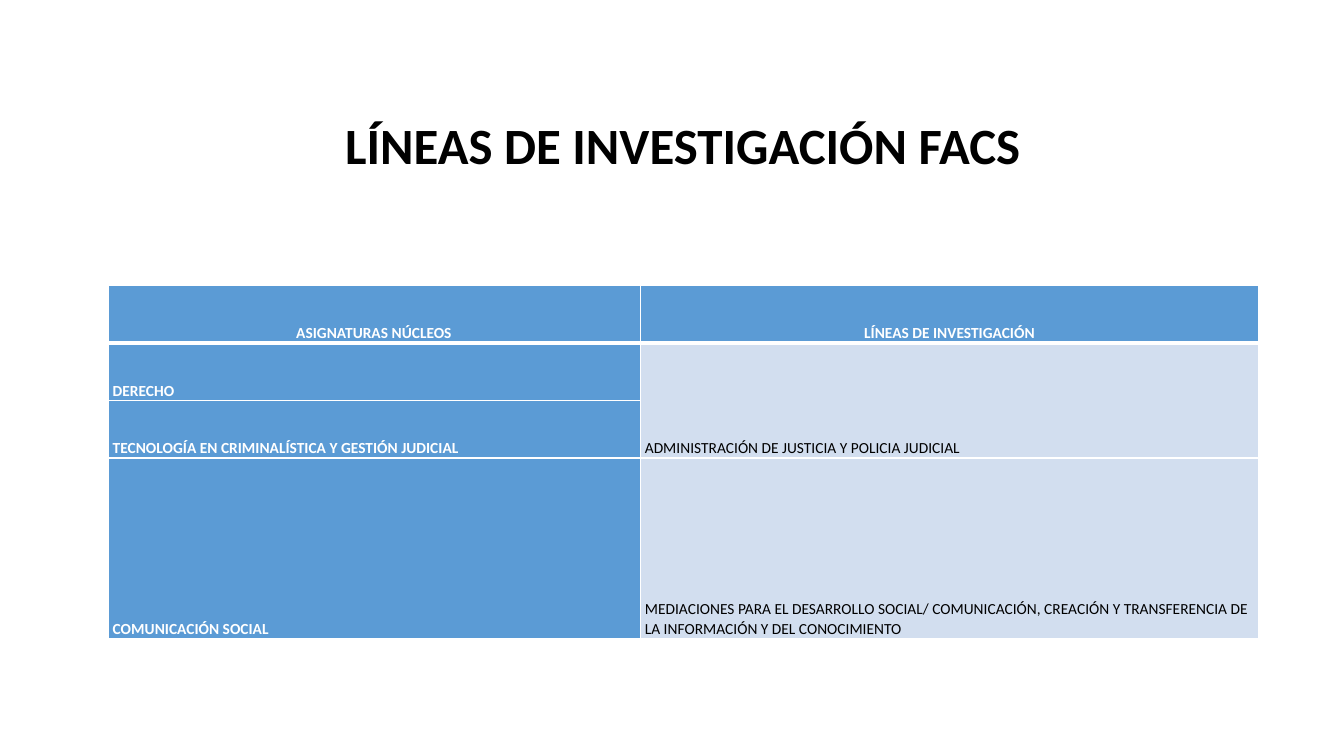
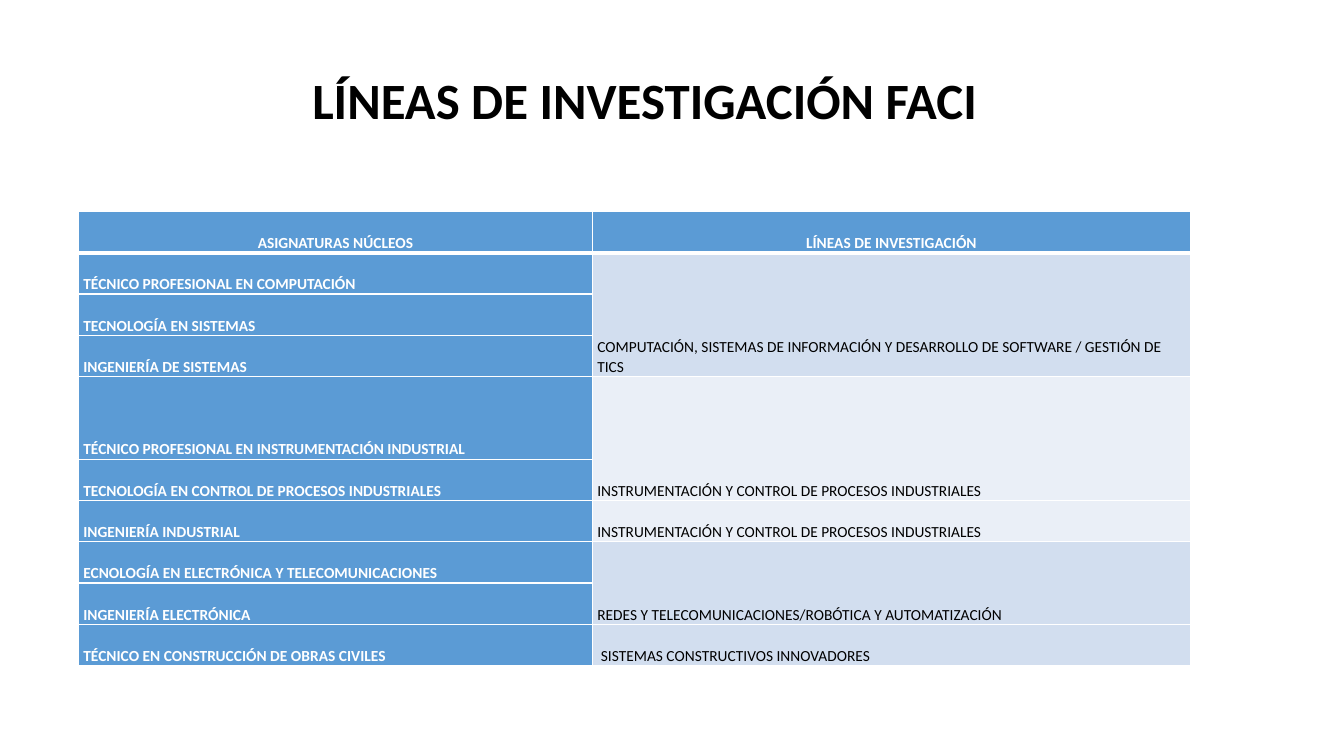
from lxml import etree
from pptx import Presentation
from pptx.dml.color import RGBColor
from pptx.enum.text import MSO_ANCHOR, PP_ALIGN
from pptx.oxml.ns import qn
from pptx.util import Cm, Pt

CENTER, LEFT = PP_ALIGN.CENTER, PP_ALIGN.LEFT
TOP, BOTTOM = MSO_ANCHOR.TOP, MSO_ANCHOR.BOTTOM

FONT = "Calibri"
BLACK, WHITE = "000000", "FFFFFF"
BLUE, PALE, PALER = "5B9BD5", "D2DEEF", "EAEFF7"

HEADINGS = ("ASIGNATURAS NÚCLEOS", "LÍNEAS DE INVESTIGACIÓN")
SUBJECT_SHARE = 0.4623
TITLE_SIZE = (23.67, 3.68)

# Each group: research line, its fill, the subjects that share it
FACS_GROUPS = [
    ("ADMINISTRACIÓN DE JUSTICIA Y POLICIA JUDICIAL", PALE,
     ["DERECHO", "TECNOLOGÍA EN CRIMINALÍSTICA Y GESTIÓN JUDICIAL"]),
    ("MEDIACIONES PARA EL DESARROLLO SOCIAL/ COMUNICACIÓN, CREACIÓN Y "
     "TRANSFERENCIA DE LA INFORMACIÓN Y DEL CONOCIMIENTO", PALE,
     ["COMUNICACIÓN SOCIAL"]),
]
FACI_GROUPS = [
    ("COMPUTACIÓN, SISTEMAS DE INFORMACIÓN Y DESARROLLO DE SOFTWARE / "
     "GESTIÓN DE TICS", PALE,
     ["TÉCNICO PROFESIONAL EN COMPUTACIÓN", "TECNOLOGÍA EN SISTEMAS",
      "INGENIERÍA DE SISTEMAS"]),
    ("INSTRUMENTACIÓN Y CONTROL DE PROCESOS INDUSTRIALES", PALER,
     ["TÉCNICO PROFESIONAL EN INSTRUMENTACIÓN INDUSTRIAL",
      "TECNOLOGÍA EN CONTROL DE PROCESOS INDUSTRIALES"]),
    ("INSTRUMENTACIÓN Y CONTROL DE PROCESOS INDUSTRIALES", PALER,
     ["INGENIERÍA INDUSTRIAL"]),
    ("REDES Y TELECOMUNICACIONES/ROBÓTICA Y AUTOMATIZACIÓN", PALE,
     ["ECNOLOGÍA EN ELECTRÓNICA Y TELECOMUNICACIONES",
      "INGENIERÍA ELECTRÓNICA"]),
    (" SISTEMAS CONSTRUCTIVOS INNOVADORES", PALE,
     ["TÉCNICO EN CONSTRUCCIÓN DE OBRAS CIVILES"]),
]


def rgb(hex_color):
    return RGBColor.from_string(hex_color)


def write(paragraph, text, size, color, bold, align, spacing):
    paragraph.alignment = align
    paragraph.line_spacing = spacing
    run = paragraph.add_run()
    run.text = text
    font = run.font
    font.name, font.size, font.bold = FONT, Pt(size), bold
    font.color.rgb = rgb(color)


def set_borders(cell, top, bottom):
    """Draw white borders; top and bottom widths are in points."""
    properties = cell._tc.get_or_add_tcPr()
    sides = (("a:lnL", 1), ("a:lnR", 1), ("a:lnT", top), ("a:lnB", bottom))
    for position, (tag, width) in enumerate(sides):
        line = etree.Element(qn(tag), w=str(Pt(width)))
        fill = etree.SubElement(line, qn("a:solidFill"))
        etree.SubElement(fill, qn("a:srgbClr"), val=WHITE)
        properties.insert(position, line)


def style_cell(cell, fill, top=1, bottom=1):
    cell.fill.solid()
    cell.fill.fore_color.rgb = rgb(fill)
    cell.vertical_anchor = BOTTOM
    cell.margin_left = cell.margin_right = Cm(0.12)
    cell.margin_top = cell.margin_bottom = 0
    set_borders(cell, top, bottom)


def write_cell(cell, text, color=WHITE, bold=True, align=LEFT):
    write(cell.text_frame.paragraphs[0], text, 11, color, bold, align, 1.07)


def add_title(slide, left, top, text):
    width, height = TITLE_SIZE
    frame = slide.shapes.add_textbox(
        Cm(left), Cm(top), Cm(width), Cm(height)).text_frame
    frame.word_wrap = True
    frame.vertical_anchor = TOP
    frame.margin_top = Cm(0.18)
    write(frame.paragraphs[0], text, 36.3, BLACK, True, CENTER, 0.7)


def add_lines_table(slide, box, groups, row_height, tall_rows):
    """Place the subjects and their research lines; tall_rows maps row to height."""
    left, top, width, height = box
    row_count = 1 + sum(len(subjects) for _, _, subjects in groups)
    table = slide.shapes.add_table(
        row_count, 2, Cm(left), Cm(top), Cm(width), Cm(height)).table
    table.columns[0].width = Cm(width * SUBJECT_SHARE)
    table.columns[1].width = Cm(width * (1 - SUBJECT_SHARE))
    for number, row in enumerate(table.rows):
        row.height = Cm(tall_rows.get(number, row_height))

    for column, heading in enumerate(HEADINGS):
        cell = table.cell(0, column)
        style_cell(cell, BLUE, bottom=3)
        write_cell(cell, heading, align=CENTER)

    first = 1
    for research_line, fill, subjects in groups:
        for row, subject in enumerate(subjects, first):
            top_border = 3 if row == 1 else 1
            style_cell(table.cell(row, 0), BLUE, top_border)
            style_cell(table.cell(row, 1), fill, top_border)
            write_cell(table.cell(row, 0), subject)
        line_cell = table.cell(first, 1)
        if len(subjects) > 1:
            line_cell.merge(table.cell(first + len(subjects) - 1, 1))
        write_cell(line_cell, research_line, BLACK, False)
        first += len(subjects)


def add_faculty_slide(deck, title, title_at, box, groups, row_height, tall_rows):
    slide = deck.slides.add_slide(deck.slide_layouts[6])
    add_title(slide, *title_at, title)
    add_lines_table(slide, box, groups, row_height, tall_rows)


def main():
    deck = Presentation()
    deck.slide_width, deck.slide_height = Cm(33.87), Cm(19.05)
    add_faculty_slide(deck, "LÍNEAS DE INVESTIGACIÓN FACS", (5.38, 3.1),
                      (2.72, 7.19, 29.01, 8.9), FACS_GROUPS, 1.45, {3: 4.55})
    add_faculty_slide(deck, "LÍNEAS DE INVESTIGACIÓN FACI", (4.42, 1.98),
                      (1.98, 5.33, 28.02, 11.44), FACI_GROUPS, 1.04, {4: 2.08})
    deck.save("out.pptx")


if __name__ == "__main__":
    main()
